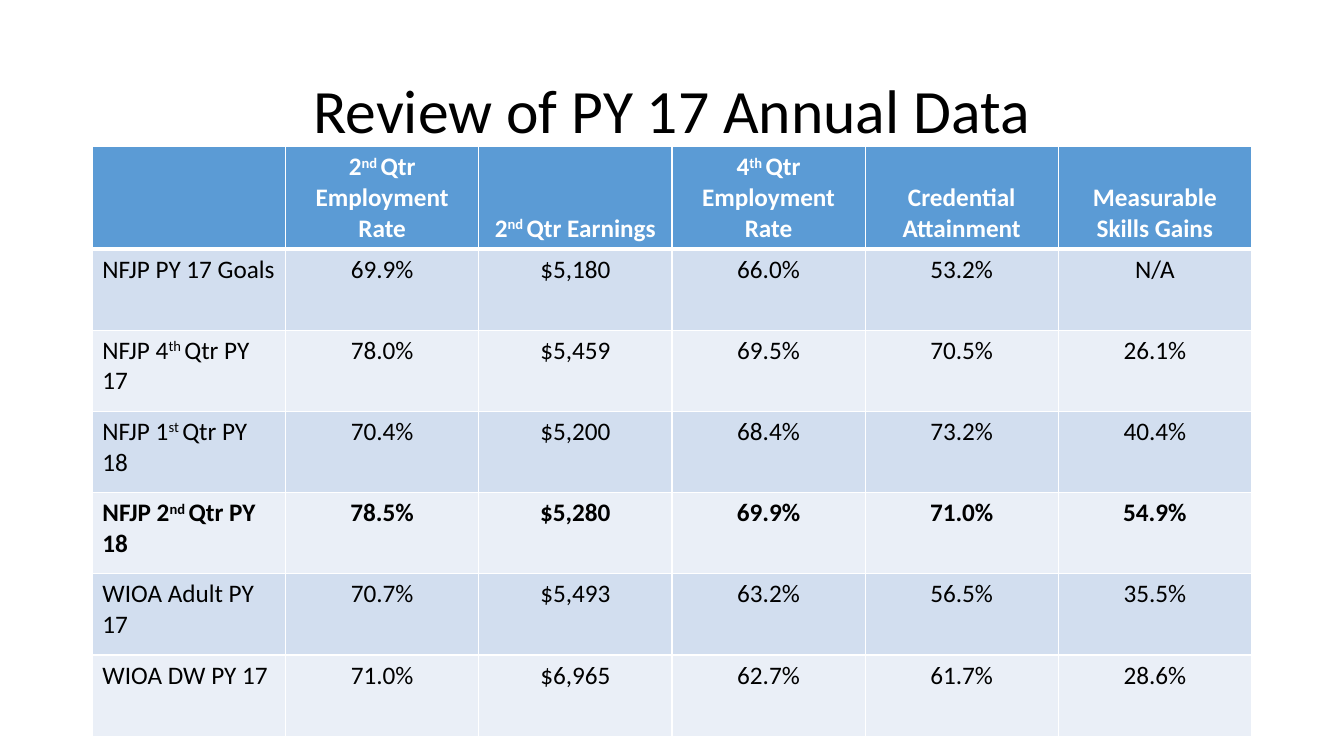
from lxml.etree import SubElement
from pptx import Presentation
from pptx.dml.color import RGBColor
from pptx.enum.text import MSO_ANCHOR, PP_ALIGN
from pptx.oxml.ns import qn
from pptx.util import Pt

# Content: text between ^ marks is superscript
TITLE = "Review of PY 17 Annual Data"
HEADERS = ["", "2^nd ^Qtr Employment Rate", "2^nd ^Qtr Earnings",
           "4^th ^Qtr Employment Rate", "Credential Attainment",
           "Measurable Skills Gains"]
ROWS = [
    ["NFJP PY 17 Goals", "69.9%", "$5,180", "66.0%", "53.2%", "N/A"],
    ["NFJP 4^th ^Qtr PY 17", "78.0%", "$5,459", "69.5%", "70.5%", "26.1%"],
    ["NFJP 1^st ^Qtr PY 18", "70.4%", "$5,200", "68.4%", "73.2%", "40.4%"],
    ["NFJP 2^nd ^Qtr PY 18", "78.5%", "$5,280", "69.9%", "71.0%", "54.9%"],
    ["WIOA Adult PY 17", "70.7%", "$5,493", "63.2%", "56.5%", "35.5%"],
    ["WIOA DW PY 17", "71.0%", "$6,965", "62.7%", "61.7%", "28.6%"],
]
BOLD_ROWS = {0, 4}

# Look and measures, in points
FONT = "Calibri"
WHITE, BLACK, HEADER_FILL = "FFFFFF", "000000", "5B9BD5"
BAND_FILLS = ["D2DEEF", "EAEFF7"]
LEFT, WIDTH = 66, 828
TITLE_TOP, TITLE_HEIGHT = 28.75, 104.4
TABLE_TOP, HEADER_HEIGHT, ROW_HEIGHT = 104.7, 73, 58


def color(code):
    return RGBColor.from_string(code)


def write_text(frame, text, size=18, ink=BLACK, bold=False,
               align=PP_ALIGN.CENTER, spacing=1.0):
    para = frame.paragraphs[0]
    para.alignment = align
    para.line_spacing = spacing
    para.font.size = Pt(size)
    for index, part in enumerate(text.split("^")):
        if not part:
            continue
        span = para.add_run()
        span.text = part
        span.font.name = FONT
        span.font.size = Pt(size)
        span.font.bold = bold
        span.font.color.rgb = color(ink)
        if index % 2:
            span.font._element.set("baseline", "30000")


def draw_borders(cell, top, bottom):
    properties = cell._tc.get_or_add_tcPr()
    for side, width in (("L", 1), ("R", 1), ("T", top), ("B", bottom)):
        line = SubElement(properties, qn(f"a:ln{side}"), w=str(Pt(width)))
        fill = SubElement(line, qn("a:solidFill"))
        SubElement(fill, qn("a:srgbClr"), val=WHITE)


def add_title(page):
    box = page.shapes.title
    box.left, box.top = Pt(LEFT), Pt(TITLE_TOP)
    box.width, box.height = Pt(WIDTH), Pt(TITLE_HEIGHT)
    box.text_frame.word_wrap = True
    box.text_frame.vertical_anchor = MSO_ANCHOR.MIDDLE
    write_text(box.text_frame, TITLE, size=44, spacing=0.9)


def add_data_table(page):
    grid = [HEADERS] + ROWS
    height = HEADER_HEIGHT + ROW_HEIGHT * len(ROWS)
    table = page.shapes.add_table(len(grid), len(HEADERS), Pt(LEFT), Pt(TABLE_TOP),
                                  Pt(WIDTH), Pt(height)).table
    for column in table.columns:
        column.width = Pt(WIDTH / len(HEADERS))

    for row, texts in enumerate(grid):
        is_header = row == 0
        table.rows[row].height = Pt(HEADER_HEIGHT if is_header else ROW_HEIGHT)
        for column, text in enumerate(texts):
            cell = table.cell(row, column)
            draw_borders(cell, top=3 if row == 1 else 1, bottom=3 if is_header else 1)
            cell.fill.solid()
            cell.fill.fore_color.rgb = color(
                HEADER_FILL if is_header else BAND_FILLS[(row - 1) % 2])
            cell.vertical_anchor = MSO_ANCHOR.BOTTOM if is_header else MSO_ANCHOR.TOP
            write_text(cell.text_frame, text, ink=WHITE if is_header else BLACK,
                       bold=row in BOLD_ROWS,
                       align=PP_ALIGN.CENTER if column else PP_ALIGN.LEFT)


def main():
    deck = Presentation()
    deck.slide_width, deck.slide_height = Pt(960), Pt(540)
    page = deck.slides.add_slide(deck.slide_layouts[5])
    add_title(page)
    add_data_table(page)
    deck.save("out.pptx")


if __name__ == "__main__":
    main()
